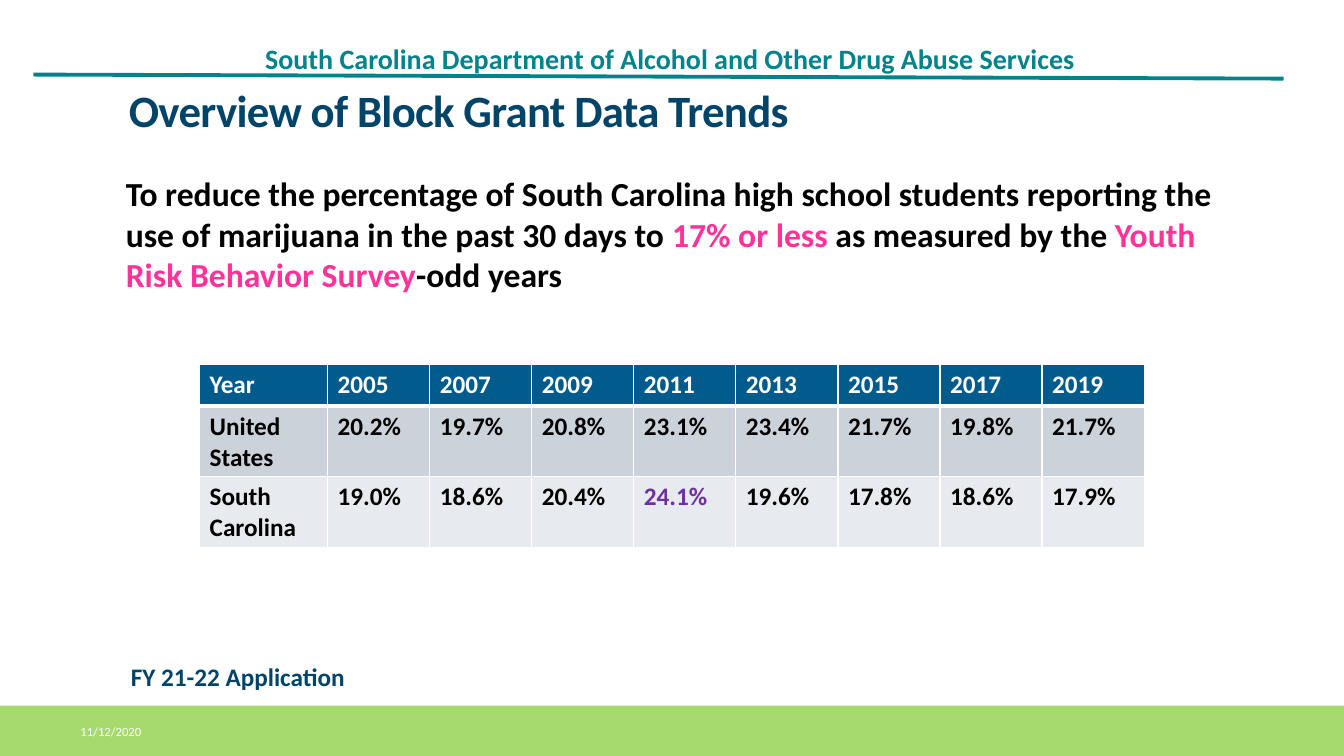
from lxml.etree import SubElement
from pptx import Presentation
from pptx.dml.color import RGBColor
from pptx.enum.shapes import MSO_CONNECTOR, MSO_SHAPE
from pptx.enum.text import MSO_ANCHOR
from pptx.oxml.ns import qn
from pptx.util import Inches, Pt

TEAL, NAVY, PINK = "00838B", "014469", "FF3399"
BLACK, WHITE = "000000", "FFFFFF"

YEARS = ["Year"] + [str(year) for year in range(2005, 2020, 2)]
RATES = [
    YEARS,
    ["United States", "20.2%", "19.7%", "20.8%", "23.1%", "23.4%", "21.7%", "19.8%", "21.7%"],
    ["South Carolina", "19.0%", "18.6%", "20.4%", "24.1%", "19.6%", "17.8%", "18.6%", "17.9%"],
]
FILLS = ["015B8C", "CCD2DA", "E7EAEE"]
PEAK = (2, 4)
GOAL = [
    ("To reduce the percentage of South Carolina high school students "
     "reporting the use of marijuana in the past 30 days to ", BLACK),
    ("17% or less ", PINK),
    ("as measured by the ", BLACK),
    ("Youth Risk Behavior Survey", PINK),
    ("-odd years", BLACK),
]


def color(code):
    return RGBColor.from_string(code)


def style(run, size, code, bold=True):
    font = run.font
    font.name, font.size, font.bold = "Calibri", Pt(size), bold
    font.color.rgb = color(code)


def add_text(slide, box, parts, size, bold=True, wrap=True):
    frame = slide.shapes.add_textbox(*map(Inches, box)).text_frame
    frame.word_wrap = wrap
    for words, code in parts:
        run = frame.paragraphs[0].add_run()
        run.text = words
        style(run, size, code, bold)
    return frame


def add_header(slide, box):
    # Agency name above a slightly sloping rule
    left, top, width, height = box
    frame = add_text(slide, (left + 2.23, top, 10.21, 0.63),
                     [("South Carolina Department of Alcohol and Other Drug Abuse Services", TEAL)], 20)
    frame.vertical_anchor = MSO_ANCHOR.MIDDLE
    frame.margin_left = frame.margin_right = Inches(0.07)
    frame.margin_top = frame.margin_bottom = Inches(0.04)
    frame.paragraphs[0].line_spacing = 0.9
    rule = slide.shapes.add_connector(
        MSO_CONNECTOR.STRAIGHT, Inches(left), Inches(top + height - 0.04),
        Inches(left + width), Inches(top + height))
    rule.line.color.rgb = color(TEAL)
    rule.line.width = Pt(2.75)
    SubElement(rule._element.spPr, qn("a:effectLst"))


def add_footer(slide, box):
    # Green band with the date
    left, top, width, height = box
    band = slide.shapes.add_shape(MSO_SHAPE.RECTANGLE, *map(Inches, box))
    band.shadow.inherit = False
    band.fill.solid()
    band.fill.fore_color.rgb = color("A6D96E")
    band.line.fill.background()
    date = add_text(slide, (left + 0.7, top + 0.06, 2.7, 0.4), [("11/12/2020", WHITE)], 9, bold=False)
    date.vertical_anchor = MSO_ANCHOR.MIDDLE


def add_edges(cell, below):
    # White cell borders, placed ahead of the fill
    props = cell._tc.get_or_add_tcPr()
    for spot, (tag, width) in enumerate((("lnL", 1), ("lnR", 1), ("lnT", 1), ("lnB", below))):
        edge = SubElement(props, qn("a:" + tag), w=str(Pt(width)))
        SubElement(SubElement(edge, qn("a:solidFill")), qn("a:srgbClr"), val=WHITE)
        props.insert(spot, edge)


def add_rates(slide, box):
    # Usage rates by year
    shape = slide.shapes.add_table(len(RATES), len(YEARS), *map(Inches, box))
    table = shape.table
    first = 1.27
    for index, column in enumerate(table.columns):
        column.width = Inches(first if index == 0 else (box[2] - first) / (len(YEARS) - 1))
    for row, height in zip(table.rows, (0.41, 0.7, 0.7)):
        row.height = Inches(height)
    for r, values in enumerate(RATES):
        for c, value in enumerate(values):
            cell = table.cell(r, c)
            cell.text_frame.text = value
            code = "7030A0" if (r, c) == PEAK else BLACK if r else WHITE
            style(cell.text_frame.paragraphs[0].runs[0], 18, code)
            cell.fill.solid()
            cell.fill.fore_color.rgb = color(FILLS[r])
            add_edges(cell, 1 if r else 3)


def add_body(slide, box):
    # Title, goal, table and application note
    left, top, width, height = box
    title = add_text(slide, (left + 0.03, top, 11, 0.67),
                     [("Overview of Block Grant Data Trends", NAVY)], 32)
    line = title.paragraphs[0]
    line.line_spacing = 0.85
    line.runs[0]._r.get_or_add_rPr().set("spc", "-50")
    add_text(slide, (left, top + 0.82, width, 2.29), GOAL, 24)
    add_rates(slide, (left + 0.83, top + 2.77, 9.37, 1.81))
    add_text(slide, (left + 0.05, top + height - 0.4, 2.34, 0.4),
             [("FY 21-22 Application", NAVY)], 18, wrap=False)


def main():
    deck = Presentation()
    deck.slide_width, deck.slide_height = Inches(13.33), Inches(7.5)
    slide = deck.slides.add_slide(deck.slide_layouts[6])
    add_header(slide, (0.33, 0.28, 12.4, 0.5))
    add_footer(slide, (0, 7, 13.33, 0.5))
    add_body(slide, (1.15, 0.85, 11.03, 6.06))
    deck.save("out.pptx")


if __name__ == "__main__":
    main()
